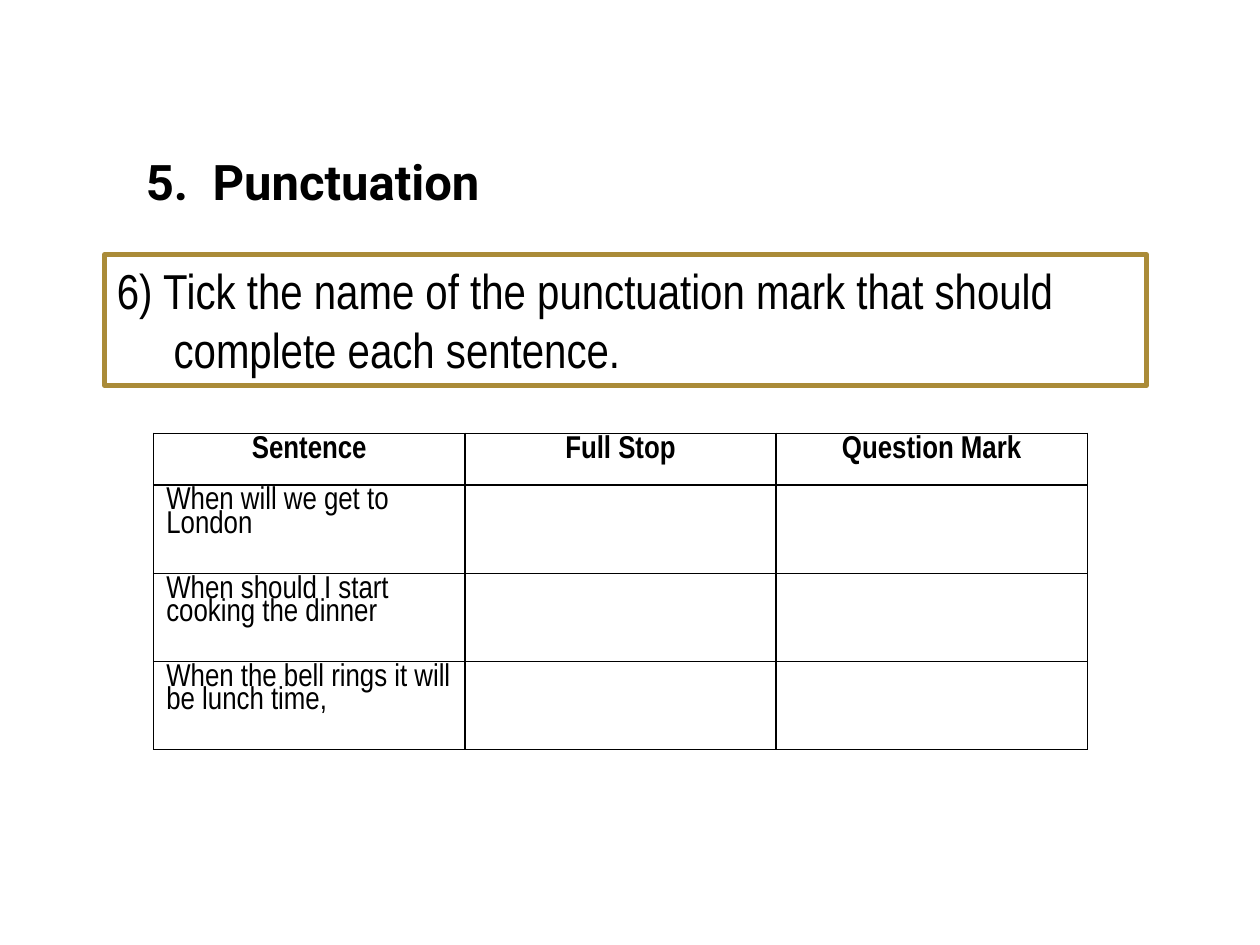
from lxml.etree import SubElement as Sub
from pptx import Presentation as Deck
from pptx.dml.color import RGBColor as Color
from pptx.enum.shapes import MSO_SHAPE as Shape
from pptx.enum.text import MSO_ANCHOR as Anchor, PP_ALIGN as Align
from pptx.oxml.ns import qn
from pptx.util import Inches, Pt

HUES = {"ink": "000000", "paper": "FFFFFF", "gold": "AA8B38"}
ROWS = [
    ["Sentence", "Full Stop", "Question Mark"],
    ["When will we get to London", "", ""],
    ["When should I start cooking the dinner", "", ""],
    ["When the bell rings it will be lunch time,", "", ""],
]


def hue(name):
    return Color.from_string(HUES[name])


def paint(item, name):
    item.fill.solid()
    item.fill.fore_color.rgb = hue(name)


def write(para, text, size=28, face="Arial Narrow", bold=False,
          align=Align.LEFT, space=None, indent=0):
    para.alignment = align
    para.line_spacing = space
    if indent:
        para._p.get_or_add_pPr().set("marL", str(Inches(indent)))
    para.font.size = Pt(size)
    para.font.name = face
    para.font.bold = bold
    para.font.color.rgb = hue("ink")
    if text:
        run = para.add_run()
        run.text = text
        run.font.size = Pt(size)
        run.font.name = face
        run.font.bold = bold
        run.font.color.rgb = hue("ink")


def add_title(slide):
    box = slide.shapes.add_textbox(Inches(1.06), Inches(1.15), Inches(4.88), Inches(0.57))
    box.text_frame.word_wrap = True
    write(box.text_frame.paragraphs[0], "5.  Punctuation", face="Roboto", bold=True)


def add_task(slide):
    box = slide.shapes.add_shape(Shape.RECTANGLE, Inches(0.83), Inches(2.02),
                                 Inches(8.27), Inches(1.04))
    box.shadow.inherit = False
    paint(box, "paper")
    box.line.color.rgb = hue("gold")
    box.line.width = Pt(2.5)
    frame = box.text_frame
    frame.word_wrap = True
    frame.vertical_anchor = Anchor.TOP
    write(frame.paragraphs[0], "6) Tick the name of the punctuation mark that should")
    write(frame.add_paragraph(), "complete each sentence.", indent=0.45)


def edge(cell):
    props = cell._tc.get_or_add_tcPr()
    for side in ("lnL", "lnR", "lnT", "lnB"):
        line = Sub(props, qn("a:" + side), w=str(Pt(1)))
        Sub(Sub(line, qn("a:solidFill")), qn("a:srgbClr"), val=HUES["ink"])


def add_grid(slide):
    grid = slide.shapes.add_table(len(ROWS), len(ROWS[0]), Inches(1.22), Inches(3.44),
                                  Inches(7.4), Inches(2.52)).table
    for col in grid.columns:
        col.width = Inches(2.47)
    for r, texts in enumerate(ROWS):
        head = r == 0
        grid.rows[r].height = Inches(0.41 if head else 0.7)
        for c, text in enumerate(texts):
            cell = grid.cell(r, c)
            edge(cell)
            paint(cell, "paper")
            write(cell.text_frame.paragraphs[0], text, size=18, bold=head,
                  align=Align.CENTER if head else Align.LEFT, space=0.78)


def main():
    deck = Deck()
    deck.slide_width, deck.slide_height = Inches(10), Inches(7.5)
    slide = deck.slides.add_slide(deck.slide_layouts[6])
    add_title(slide)
    add_task(slide)
    add_grid(slide)
    deck.save("out.pptx")


if __name__ == "__main__":
    main()
